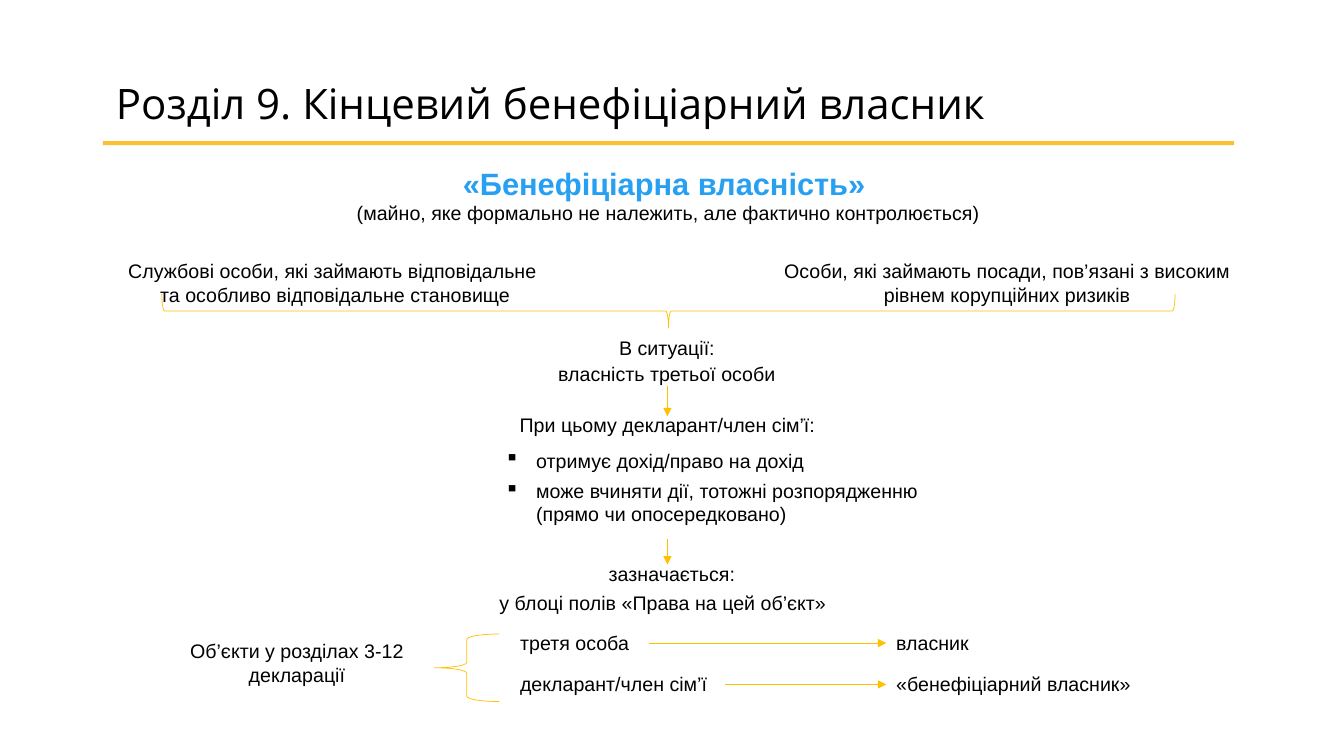
import pptx
import pptx.dml.color
import pptx.enum.shapes
import pptx.enum.text
import pptx.oxml
import pptx.oxml.ns
import pptx.util
from pptx.util import Inches

ALIGN = pptx.enum.text.PP_ALIGN
SHAPE = pptx.enum.shapes.MSO_SHAPE


def rgb(value):
    return pptx.dml.color.RGBColor.from_string(value)


def add_xml(parent, tag, **attrs):
    el = pptx.oxml.parse_xml(f"<a:{tag} {pptx.oxml.ns.nsdecls('a')}/>")
    for name, value in attrs.items():
        el.set(name, value)
    parent.append(el)


class Deck:
    font = "Arial"
    title_font = "Open Sans"
    size = 14
    black = "000000"
    blue = "27A0F2"
    gold = "FFC000"
    rule_gold = "FBBB1C"

    def __init__(self):
        self.prs = pptx.Presentation()
        self.prs.slide_width = Inches(13.33)
        self.prs.slide_height = Inches(7.5)
        self.s = self.prs.slides.add_slide(self.prs.slide_layouts[5])

    def format(self, p, align, size=None, color=None, bold=False, font=None):
        p.alignment = align
        for r in p.runs:
            r.font.name = font or self.font
            r.font.size = pptx.util.Pt(size or self.size)
            r.font.bold = bold
            r.font.color.rgb = rgb(color or self.black)

    def title(self, text, x, y, w, h):
        sp = self.s.shapes.title
        sp.left, sp.top, sp.width, sp.height = map(Inches, (x, y, w, h))
        tf = sp.text_frame
        tf.text = text
        tf.word_wrap = True
        tf.auto_size = pptx.enum.text.MSO_AUTO_SIZE.NONE
        tf.vertical_anchor = pptx.enum.text.MSO_ANCHOR.MIDDLE
        self.format(tf.paragraphs[0], ALIGN.LEFT, size=30, font=self.title_font)

    def text(self, text, x, y, w, h=0.34, align=ALIGN.CENTER):
        tf = self.s.shapes.add_textbox(*map(Inches, (x, y, w, h))).text_frame
        tf.word_wrap = True
        tf.auto_size = pptx.enum.text.MSO_AUTO_SIZE.SHAPE_TO_FIT_TEXT
        p = tf.paragraphs[0]
        p.text = text
        self.format(p, align)
        return tf

    def heading(self, text, note, x, y, w, h):
        tf = self.text(text, x, y, w, h)
        self.format(tf.paragraphs[0], ALIGN.CENTER, size=22, color=self.blue, bold=True)
        p = tf.add_paragraph()
        p.text = note
        self.format(p, ALIGN.CENTER)

    def bullet(self, text, x, y, w, h=0.34):
        p = self.text(text, x, y, w, h, ALIGN.LEFT).paragraphs[0]
        pPr = p._p.get_or_add_pPr()
        indent = Inches(0.31)
        pPr.set("marL", str(indent))
        pPr.set("indent", str(-indent))
        add_xml(pPr, "buChar", char="▪")

    def brace(self, x, y, w, h, rotation=0):
        sp = self.s.shapes.add_shape(SHAPE.LEFT_BRACE, *map(Inches, (x, y, w, h)))
        sp.rotation = rotation
        sp.shadow.inherit = False
        sp.fill.background()
        sp.line.color.rgb = rgb(self.gold)
        sp.line.width = pptx.util.Pt(0.5)

    def line(self, x1, y1, x2, y2, color, width):
        sp = self.s.shapes.add_connector(
            pptx.enum.shapes.MSO_CONNECTOR.STRAIGHT, *map(Inches, (x1, y1, x2, y2)))
        sp.line.color.rgb = rgb(color)
        sp.line.width = pptx.util.Pt(width)
        add_xml(sp._element.spPr, "effectLst")
        return sp.line

    def arrow(self, x1, y1, x2, y2):
        line = self.line(x1, y1, x2, y2, self.gold, 0.5)
        add_xml(line._get_or_add_ln(), "tailEnd", type="triangle")

    def rule(self, x1, x2, y):
        line = self.line(x1, y, x2, y, self.rule_gold, 3)
        clr = line._get_or_add_ln().find(".//" + pptx.oxml.ns.qn("a:srgbClr"))
        add_xml(clr, "alpha", val="90000")


def main():
    d = Deck()
    d.title("Розділ 9. Кінцевий бенефіціарний власник", 1.05, 0.71, 10.5, 0.61)
    d.rule(1.02, 12.24, 1.42)
    d.heading("«Бенефіціарна власність» ",
              "(майно, яке формально не належить, але фактично контролюється)",
              3.36, 1.58, 6.54, 0.71)

    d.text("Службові особи, які займають відповідальне \n"
           "та особливо відповідальне становище", 1.05, 2.52, 4.55, 0.57)
    d.text("Особи, які займають посади, пов’язані з високим рівнем корупційних ризиків",
           7.41, 2.52, 5.16, 0.57)
    d.brace(6.46, -1.94, 0.34, 10.05, rotation=270)

    for text, x, y, w in (
        ("В ситуації:", 6.02, 3.28, 1.19),
        ("власність третьої особи", 5.26, 3.54, 2.71),
        ("При цьому декларант/член сім’ї:", 5.01, 4.05, 3.22),
        ("зазначається:", 5.31, 5.53, 2.71),
        ("у блоці полів «Права на цей об’єкт»", 4.69, 5.81, 3.77),
    ):
        d.text(text, x, y, w)
    d.bullet("отримує дохід/право на дохід", 4.91, 4.4, 3.61)
    d.bullet("може вчиняти дії, тотожні розпорядженню (прямо чи опосередковано)",
             4.91, 4.7, 4.83, 0.57)
    for top, bottom in ((3.83, 4.13), (5.35, 5.6)):
        d.arrow(6.62, top, 6.62, bottom)

    d.text("Об’єкти у розділах 3-12 декларації", 1.44, 6.29, 3.01, 0.57)
    d.brace(4.31, 6.29, 0.64, 0.67)
    for person, w, role, role_w, y in (
        ("третя особа", 1.38, "власник", 1.38, 6.21),
        ("декларант/член сім’ї", 2.13, "«бенефіціарний власник»", 3.01, 6.62),
    ):
        d.text(person, 5.06, y, w, align=ALIGN.LEFT)
        d.text(role, 8.79, y, role_w, align=ALIGN.LEFT)
        d.arrow(5.06 + w, y + 0.17, 8.79, y + 0.17)

    d.prs.save("out.pptx")


if __name__ == "__main__":
    main()
